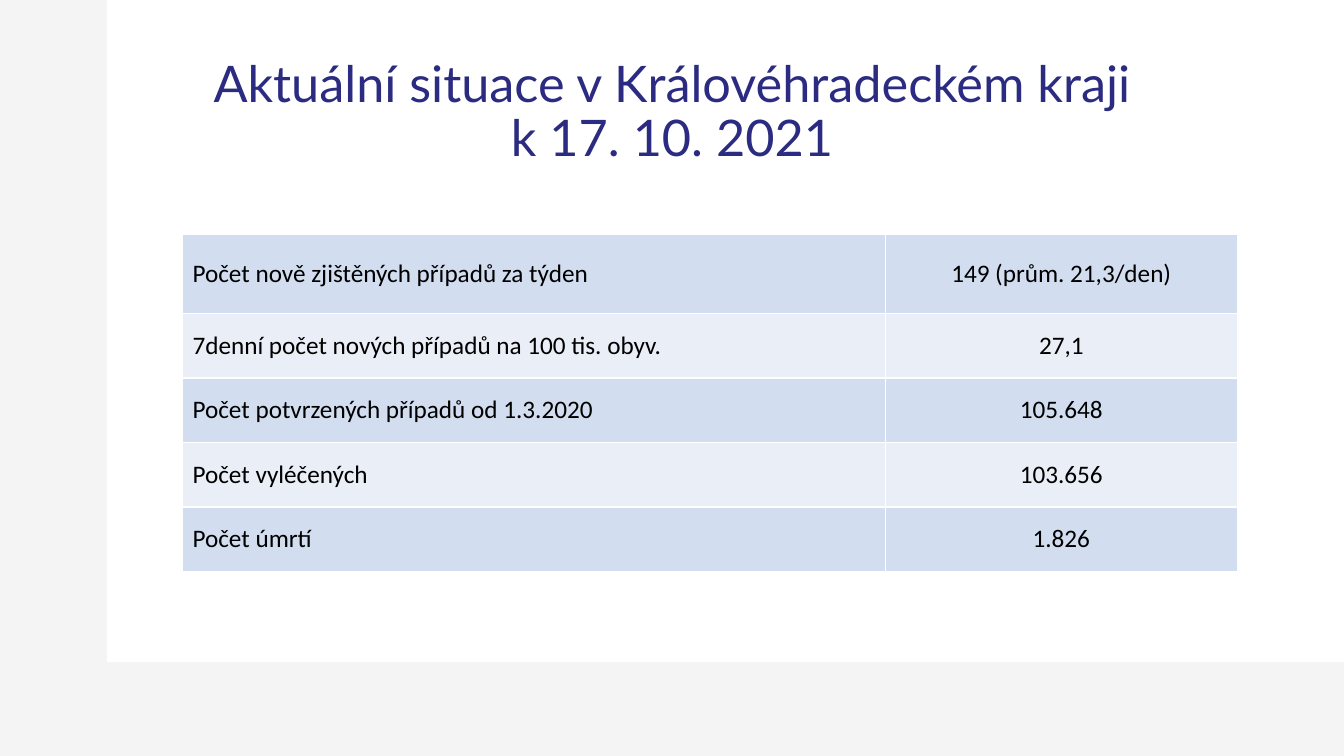
from lxml.etree import SubElement as Sub
from pptx import Presentation
from pptx.dml.color import RGBColor as Rgb
from pptx.enum.shapes import MSO_SHAPE as Shape
from pptx.enum.text import MSO_ANCHOR as Anchor, PP_ALIGN as Align
from pptx.oxml.ns import qn
from pptx.util import Inches, Pt

TITLE = "Aktuální situace v Královéhradeckém kraji\nk 17. 10. 2021"
ROWS = [
    ("Počet nově zjištěných případů za týden", "149 (prům. 21,3/den)"),
    ("7denní počet nových případů na 100 tis. obyv.\u00a0", "27,1"),
    ("Počet potvrzených případů od 1.3.2020", "105.648"),
    ("Počet vyléčených", "103.656"),
    ("Počet úmrtí", "1.826"),
]
COLORS = {"back": "F4F4F4", "panel": "FFFFFF", "title": "2B2B82",
          "text": "000000", "odd": "D2DEEF", "even": "EAEFF7", "rule": "FFFFFF"}
FONTS = {"title": {"name": "Lato", "size": Pt(36)},
         "text": {"name": "Calibri", "size": Pt(18)}}
WIDTH, HEIGHT = 13.33, 7.5
PANEL_LEFT, PANEL_HIGH = 1.06, 6.57
TITLE_WIDE, TITLE_TOP, TITLE_HIGH = 11.5, 0.4, 1.45
GRID_LEFT, GRID_TOP, GRID_WIDE = 1.81, 2.33, 10.46
SHARES = (2 / 3, 1 / 3)
FIRST_HIGH, ROW_HIGH = 0.78, 0.64


def color(name):
    return Rgb.from_string(COLORS[name])


def paint(fill, name):
    fill.solid()
    fill.fore_color.rgb = color(name)


def write(para, text, role, align):
    para.text = text
    para.alignment = align
    for key, value in FONTS[role].items():
        setattr(para.font, key, value)
    para.font.color.rgb = color(role)


def rule(cell):
    """Draw the thin border on all four sides of a cell."""
    props = cell._tc.get_or_add_tcPr()
    for place, side in enumerate(("a:lnL", "a:lnR", "a:lnT", "a:lnB")):
        line = Sub(props, qn(side), w=str(Pt(1)))
        fill = Sub(line, qn("a:solidFill"))
        Sub(fill, qn("a:srgbClr"), val=COLORS["rule"])
        props.insert(place, line)


def add_panel(slide):
    panel = slide.shapes.add_shape(
        Shape.RECTANGLE, Inches(PANEL_LEFT), 0,
        Inches(WIDTH - PANEL_LEFT), Inches(PANEL_HIGH))
    panel.shadow.inherit = False
    paint(panel.fill, "panel")
    panel.line.fill.background()


def add_title(slide):
    box = slide.shapes.add_textbox(
        Inches((WIDTH - TITLE_WIDE) / 2), Inches(TITLE_TOP),
        Inches(TITLE_WIDE), Inches(TITLE_HIGH))
    frame = box.text_frame
    frame.word_wrap = True
    frame.vertical_anchor = Anchor.MIDDLE
    para = frame.paragraphs[0]
    write(para, TITLE, "title", Align.CENTER)
    para.line_spacing = 0.9


def add_grid(slide):
    highs = [FIRST_HIGH] + [ROW_HIGH] * (len(ROWS) - 1)
    table = slide.shapes.add_table(
        len(ROWS), len(SHARES), Inches(GRID_LEFT), Inches(GRID_TOP),
        Inches(GRID_WIDE), Inches(sum(highs))).table
    table.first_row = table.horz_banding = False
    for col, share in zip(table.columns, SHARES):
        col.width = Inches(GRID_WIDE * share)
    for r, (texts, high) in enumerate(zip(ROWS, highs)):
        table.rows[r].height = Inches(high)
        for c, (text, align) in enumerate(zip(texts, (Align.LEFT, Align.CENTER))):
            cell = table.cell(r, c)
            cell.vertical_anchor = Anchor.MIDDLE
            paint(cell.fill, "even" if r % 2 else "odd")
            rule(cell)
            write(cell.text_frame.paragraphs[0], text, "text", align)


def main():
    deck = Presentation()
    deck.slide_width, deck.slide_height = Inches(WIDTH), Inches(HEIGHT)
    slide = deck.slides.add_slide(deck.slide_layouts[6])
    paint(slide.background.fill, "back")
    add_panel(slide)
    add_title(slide)
    add_grid(slide)
    deck.save("out.pptx")


if __name__ == "__main__":
    main()
